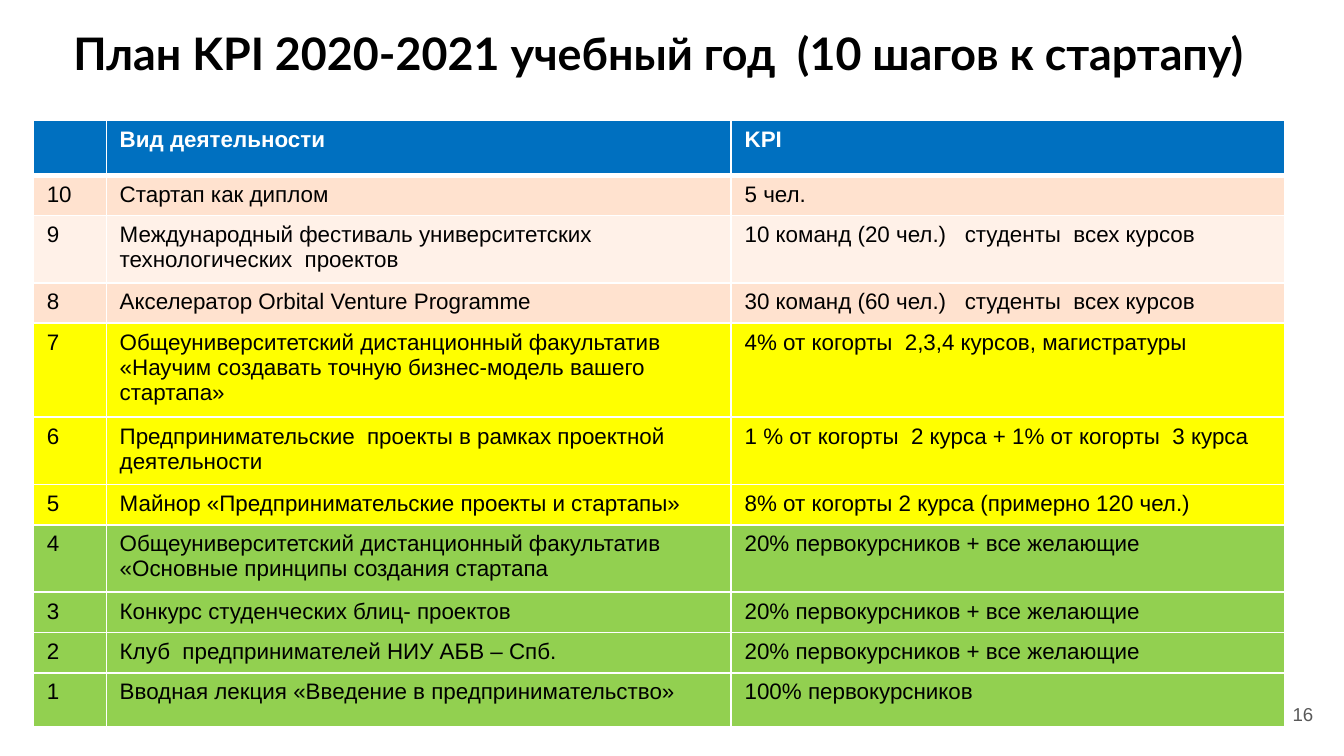
from lxml.etree import SubElement
from pptx import Presentation
from pptx.dml.color import RGBColor
from pptx.enum.text import MSO_ANCHOR as Anchor, PP_ALIGN as Align
from pptx.oxml.ns import qn
from pptx.util import Cm, Pt


def color(value):
    return RGBColor.from_string(value)


def write(frame, text, font_color, align=Align.LEFT, **font_format):
    paragraph = frame.paragraphs[0]
    paragraph.alignment = align
    run = paragraph.add_run()
    run.text = text
    run.font.color.rgb = color(font_color)
    for name, value in font_format.items():
        setattr(run.font, name, value)


presentation = Presentation()
presentation.slide_width = Cm(25.4)
presentation.slide_height = Cm(14.29)
slide = presentation.slides.add_slide(presentation.slide_layouts[6])

title_format = {"name": "Lato", "size": Pt(24), "bold": True}
number_format = {"name": "Arial", "size": Pt(10)}
text_boxes = [
    ("План KPI 2020-2021 учебный год  (10 шагов к стартапу)", (1.14, 0.23, 23.67, 1.6),
     "000000", Align.LEFT, Anchor.TOP, title_format),
    ("16", (23.55, 12.95, 1.52, 1.09), "595959", Align.RIGHT, Anchor.MIDDLE, number_format),
]
for text, place, font_color, align, anchor, font_format in text_boxes:
    frame = slide.shapes.add_textbox(*map(Cm, place)).text_frame
    frame_format = {"word_wrap": True, "vertical_anchor": anchor}
    for side in ("left", "top", "right", "bottom"):
        frame_format[f"margin_{side}"] = Cm(0.25)
    for name, value in frame_format.items():
        setattr(frame, name, value)
    write(frame, text, font_color, align, **font_format)

BLUE, PEACH, PALE, YELLOW, GREEN = "0070C0", "FFE2CF", "FFF1E8", "FFFF00", "92D050"
rows = [
    (1.03, BLUE, "Вид деятельности", "KPI"),
    (0.64, PEACH, "Стартап как диплом", "5 чел."),
    (0.81, PALE, "Международный фестиваль университетских технологических  проектов",
     "10 команд (20 чел.)   студенты  всех курсов"),
    (0, PEACH, "Акселератор Orbital Venture Programme",
     "30 команд (60 чел.)   студенты  всех курсов"),
    (1.03, YELLOW, "Общеуниверситетский дистанционный факультатив  "
     "«Научим создавать точную бизнес-модель вашего стартапа»",
     "4% от когорты  2,3,4 курсов, магистратуры"),
    (1.03, YELLOW, "Предпринимательские  проекты в рамках проектной деятельности",
     "1 % от когорты  2 курса + 1% от когорты  3 курса"),
    (0.75, YELLOW, "Майнор «Предпринимательские проекты и стартапы»",
     "8% от когорты 2 курса (примерно 120 чел.)"),
    (1.03, GREEN, "Общеуниверситетский дистанционный факультатив "
     "«Основные принципы создания стартапа", "20% первокурсников + все желающие"),
    (0, GREEN, "Конкурс cтуденческих блиц- проектов", "20% первокурсников + все желающие"),
    (0.7, GREEN, "Клуб  предпринимателей НИУ АБВ – Спб.", "20% первокурсников + все желающие"),
    (1.03, GREEN, "Вводная лекция «Введение в предпринимательство»", "100% первокурсников"),
]
column_widths = [1.38, 11.81, 10.47]
table_shape = slide.shapes.add_table(
    len(rows), len(column_widths), Cm(0.63), Cm(2.28), Cm(sum(column_widths)), Cm(11.45)
)
table = table_shape.table
table.horz_banding = False
for column, width in zip(table.columns, column_widths):
    column.width = Cm(width)

for index, (height, fill, activity, target) in enumerate(rows):
    table.rows[index].height = Cm(height)
    is_header = index == 0
    step = "" if is_header else str(len(rows) - index)
    for cell, text in zip(table.rows[index].cells, (step, activity, target)):
        write(cell.text_frame, text, "FFFFFF" if is_header else "000000",
              name="Arial", size=Pt(12), bold=is_header)
        properties = cell._tc.get_or_add_tcPr()
        for side in "LRTB":
            is_thick = (index, side) in ((0, "B"), (1, "T"))
            line = SubElement(properties, qn(f"a:ln{side}"), w=str(Pt(3 if is_thick else 1)))
            SubElement(SubElement(line, qn("a:solidFill")), qn("a:srgbClr"), val="FFFFFF")
        cell.fill.solid()
        cell.fill.fore_color.rgb = color(fill)
table_shape.height = Cm(11.45)

presentation.save("out.pptx")
